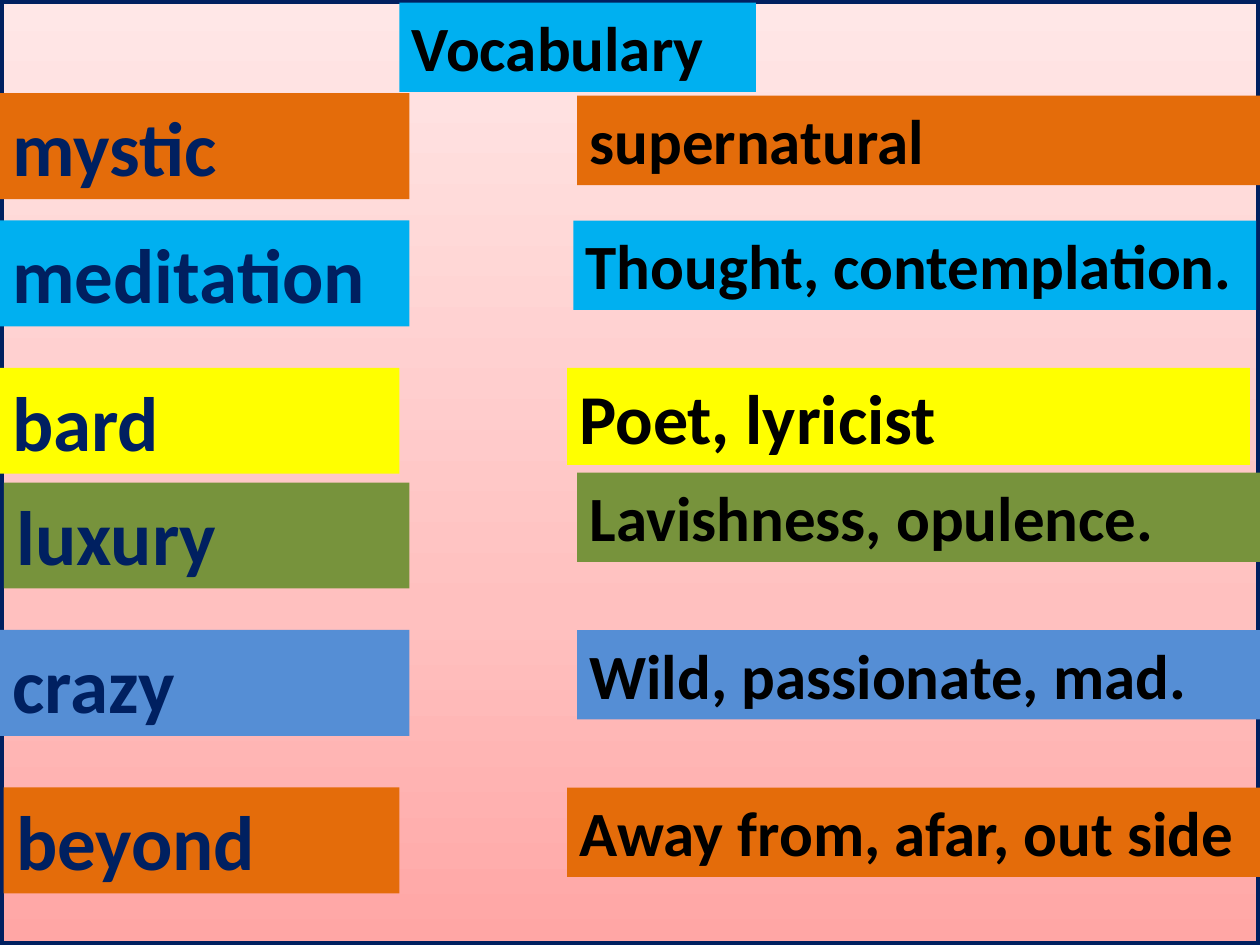
from copy import deepcopy
from pptx import Presentation
from pptx.dml.color import RGBColor as RGB
from pptx.enum.shapes import MSO_SHAPE as Shape
from pptx.enum.text import MSO_ANCHOR as Anchor, MSO_AUTO_SIZE as Fit, PP_ALIGN as Align
from pptx.oxml.ns import qn
from pptx.util import Inches, Pt

HUE = {
    "navy": "002060", "black": "000000", "orange": "E46C0A", "sky": "00B0F0",
    "yellow": "FFFF00", "green": "77933C", "blue": "558ED5",
}
FADE = [(0, "FFA6A5"), (0.35, "FFC0BF"), (1, "FFE7E7")]  # bottom to top
TITLE = "Vocabulary"

# fill, (word, left, top, width), (meaning, left, top, width, size)
ROWS = [
    ("orange", ("mystic", 0, 0.74, 3.25), ("supernatural", 4.58, 0.76, 5.42, 36)),
    ("sky", ("meditation", 0, 1.75, 3.25), ("Thought, contemplation.", 4.55, 1.75, 5.42, 36)),
    ("yellow", ("bard", 0, 2.92, 3.17), ("Poet, lyricist", 4.5, 2.92, 5.42, 40)),
    ("green", ("luxury", 0.03, 3.83, 3.22), ("Lavishness, opulence.", 4.58, 3.75, 5.42, 36)),
    ("blue", ("crazy", 0, 5, 3.25), ("Wild, passionate, mad.", 4.58, 5, 5.42, 36)),
    ("orange", ("beyond", 0.03, 6.25, 3.14), ("Away from, afar, out side", 4.5, 6.25, 5.58, 36)),
]
HIGH = {36: 0.71, 40: 0.77, 44: 0.84}  # box height by text size

deck = Presentation()
deck.slide_width, deck.slide_height = Inches(10), Inches(7.5)
slide = deck.slides.add_slide(deck.slide_layouts[6])


def add_rect(x, y, w, h):
    rect = slide.shapes.add_shape(Shape.RECTANGLE, Inches(x), Inches(y), Inches(w), Inches(h))
    rect.shadow.inherit = False
    return rect


def add_label(text, x, y, w, size, fill, ink="black"):
    box = add_rect(x, y, w, HIGH[size])
    box.fill.solid()
    box.fill.fore_color.rgb = RGB.from_string(HUE[fill])
    box.line.fill.background()
    frame = box.text_frame
    frame.word_wrap = True
    frame.auto_size = Fit.SHAPE_TO_FIT_TEXT
    frame.vertical_anchor = Anchor.TOP
    para = frame.paragraphs[0]
    para.alignment = Align.LEFT
    run = para.add_run()
    run.text = text
    font = run.font
    font.name, font.size, font.bold = "Calibri", Pt(size), True
    font.color.rgb = RGB.from_string(HUE[ink])


# Backdrop with a three-stop fade and a navy frame
back = add_rect(0, 0, 10, 7.5)
back.fill.gradient()
back.fill.gradient_angle = 90
stops = back._element.spPr.find(qn("a:gradFill")).find(qn("a:gsLst"))
stops.append(deepcopy(stops[-1]))
for stop, (place, tint) in zip(back.fill.gradient_stops, FADE):
    stop.position = place
    stop.color.rgb = RGB.from_string(tint)
back.line.color.rgb = RGB.from_string(HUE["navy"])
back.line.width = Pt(4.5)

# Title, then words on the left and meanings on the right
add_label(TITLE, 3.17, 0.02, 2.83, 36, "sky")
for fill, word, _ in ROWS:
    add_label(*word, 44, fill, "navy")
for fill, _, mean in ROWS:
    add_label(*mean, fill)

deck.save("out.pptx")
